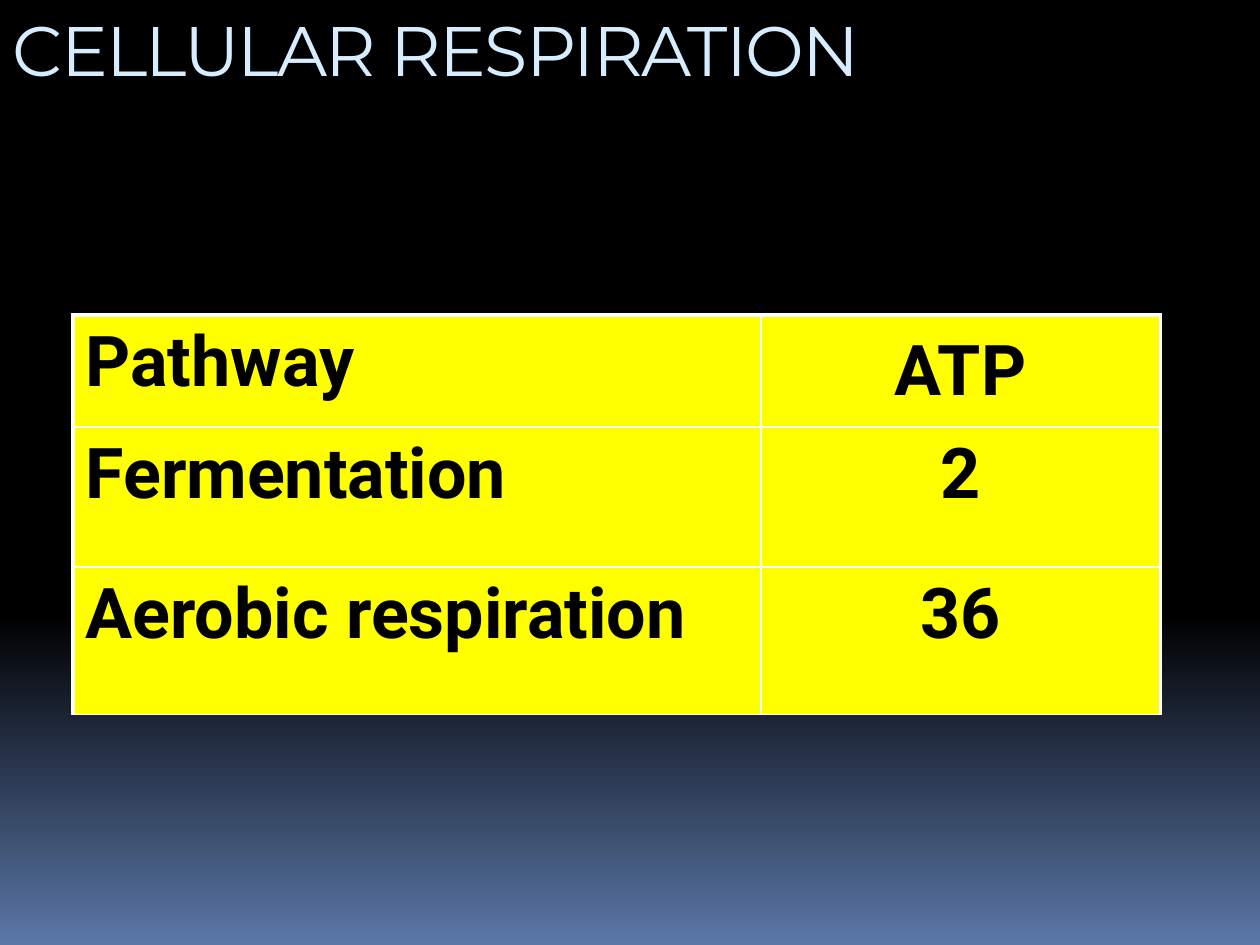
from lxml import etree
from pptx import Presentation
from pptx.dml.color import RGBColor
from pptx.enum.text import MSO_ANCHOR, PP_ALIGN
from pptx.oxml.ns import qn
from pptx.util import Inches, Pt

TOP, MIDDLE = MSO_ANCHOR.TOP, MSO_ANCHOR.MIDDLE
LEFT, CENTER = PP_ALIGN.LEFT, PP_ALIGN.CENTER

BLACK = RGBColor(0x00, 0x00, 0x00)
DUSK_BLUE = RGBColor(0x5B, 0x77, 0xA8)
PALE_BLUE = RGBColor(0xD6, 0xEC, 0xFF)
YELLOW = RGBColor(0xFF, 0xFF, 0x00)
WHITE = RGBColor(0xFF, 0xFF, 0xFF)

HEADING = "CELLULAR RESPIRATION"
YIELDS = [
    ("Pathway", "ATP"),
    ("Fermentation", "2"),
    ("Aerobic respiration", "36"),
]
COLUMN_WIDTHS = [5.46, 3.17]
ROW_HEIGHTS = [0.89, 1.11, 1.17]
TABLE_LEFT, TABLE_TOP = 0.58, 2.5
SLIDE_WIDTH, SLIDE_HEIGHT = 10, 7.5
TITLE_SHARE = 1 / 6
THICK, THIN = 2.25, 1


def style_run(run, font_name, color, bold):
    run.font.name = font_name
    run.font.size = Pt(40)
    run.font.bold = bold
    run.font.color.rgb = color


def set_borders(cell, widths):
    properties = cell._tc.get_or_add_tcPr()
    for position, (side, width) in enumerate(widths.items()):
        line = etree.Element(qn(f"a:{side}"), w=str(Pt(width)))
        solid = etree.SubElement(line, qn("a:solidFill"))
        etree.SubElement(solid, qn("a:srgbClr"), val=str(WHITE))
        properties.insert(position, line)


def set_space_before(paragraph, percent):
    spacing = etree.Element(qn("a:spcBef"))
    etree.SubElement(spacing, qn("a:spcPct"), val=str(percent * 1000))
    paragraph._p.get_or_add_pPr().insert(0, spacing)


def paint_background(slide):
    fill = slide.background.fill
    fill.gradient()
    fill.gradient_angle = 270
    for stop, (position, color) in zip(
        fill.gradient_stops, [(0.65, BLACK), (1, DUSK_BLUE)]
    ):
        stop.position = position
        stop.color.rgb = color


def add_heading(slide):
    title = slide.shapes.title
    title.left, title.top = 0, 0
    title.width = Inches(SLIDE_WIDTH)
    title.height = Inches(SLIDE_HEIGHT * TITLE_SHARE)
    frame = title.text_frame
    frame.text = HEADING
    frame.word_wrap = True
    frame.vertical_anchor = TOP
    heading = frame.paragraphs[0]
    heading.alignment = LEFT
    style_run(heading.runs[0], "Montserrat", PALE_BLUE, False)
    heading.runs[0].font._element.set("spc", "-100")


def add_yield_table(slide):
    table = slide.shapes.add_table(
        len(YIELDS), len(COLUMN_WIDTHS),
        Inches(TABLE_LEFT), Inches(TABLE_TOP),
        Inches(sum(COLUMN_WIDTHS)), Inches(sum(ROW_HEIGHTS)),
    ).table
    for column, width in zip(table.columns, COLUMN_WIDTHS):
        column.width = Inches(width)
    for row, height in zip(table.rows, ROW_HEIGHTS):
        row.height = Inches(height)

    for r, entries in enumerate(YIELDS):
        for c, entry in enumerate(entries):
            cell = table.cell(r, c)
            cell.text_frame.text = entry
            cell.fill.solid()
            cell.fill.fore_color.rgb = YELLOW
            cell.vertical_anchor = MIDDLE if (r, c) == (0, 1) else TOP
            paragraph = cell.text_frame.paragraphs[0]
            paragraph.alignment = CENTER if c else LEFT
            set_space_before(paragraph, 20)
            style_run(paragraph.runs[0], "Roboto", BLACK, True)
            set_borders(cell, {
                "lnL": THIN if c else THICK,
                "lnR": THICK if c else THIN,
                "lnT": THIN if r else THICK,
                "lnB": THIN,
            })


def main():
    deck = Presentation()
    deck.slide_width = Inches(SLIDE_WIDTH)
    deck.slide_height = Inches(SLIDE_HEIGHT)
    slide = deck.slides.add_slide(deck.slide_layouts[5])
    paint_background(slide)
    add_heading(slide)
    add_yield_table(slide)
    deck.save("out.pptx")


if __name__ == "__main__":
    main()
